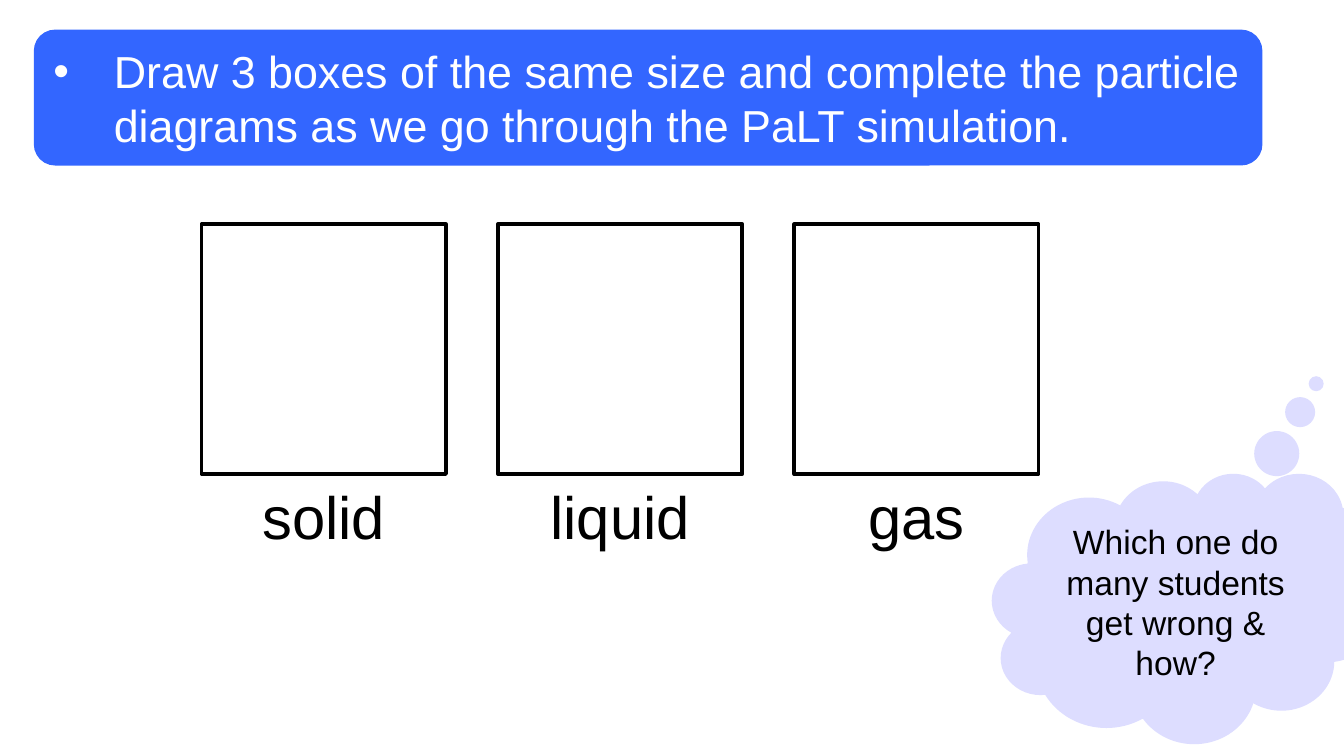
"""Build the slide with three empty particle-diagram boxes and a question cloud."""
from dataclasses import dataclass

from lxml import etree
from pptx import Presentation
from pptx.dml.color import RGBColor
from pptx.enum import shapes, text
from pptx.oxml import ns
from pptx.util import Cm, Pt


@dataclass(frozen=True)
class Theme:
    font: str = "Arial"
    black: str = "000000"
    white: str = "FFFFFF"
    banner: str = "3366FF"
    cloud: str = "DDDDFF"
    label_size: int = 32
    banner_size: int = 24
    cloud_size: int = 18
    outline: int = 2


@dataclass(frozen=True)
class Area:
    left: float
    top: float
    width: float
    height: float

    def lengths(self) -> tuple:
        return Cm(self.left), Cm(self.top), Cm(self.width), Cm(self.height)


@dataclass(frozen=True)
class StateBox:
    label: str
    column: int


THEME = Theme()
BOX = Area(3.81, 4.24, 4.62, 4.72)
PITCH = 5.6
LABEL = Area(4.14, 8.94, 3.96, 1.63)
BANNER = Area(0.64, 0.56, 23.22, 2.57)
CLOUD = Area(18.75, 8.94, 7.47, 5.11)
STATES = [StateBox(label, column) for column, label in enumerate(("solid", "liquid", "gas"))]


def shifted(area: Area, column: int) -> Area:
    return Area(area.left + column * PITCH, area.top, area.width, area.height)


def write(shape, words: str, size: int, color: str, align=text.PP_ALIGN.CENTER):
    frame = shape.text_frame
    frame.word_wrap = True
    paragraph = frame.paragraphs[0]
    paragraph.alignment = align
    run = paragraph.add_run()
    run.text = words
    run.font.name = THEME.font
    run.font.size = Pt(size)
    run.font.color.rgb = RGBColor.from_string(color)
    return paragraph


def fill_plain(shape, color: str) -> None:
    shape.fill.solid()
    shape.fill.fore_color.rgb = RGBColor.from_string(color)
    shape.line.fill.background()


def draw_state(slide, state: StateBox) -> None:
    box = slide.shapes.add_shape(
        shapes.MSO_SHAPE.RECTANGLE, *shifted(BOX, state.column).lengths())
    box.shadow.inherit = False
    box.fill.background()
    box.line.color.rgb = RGBColor.from_string(THEME.black)
    box.line.width = Pt(THEME.outline)
    label = slide.shapes.add_textbox(*shifted(LABEL, state.column).lengths())
    write(label, state.label, THEME.label_size, THEME.black)
    label.text_frame.auto_size = text.MSO_AUTO_SIZE.SHAPE_TO_FIT_TEXT


def draw_banner(placeholder, words: str) -> None:
    placeholder.left, placeholder.top, placeholder.width, placeholder.height = BANNER.lengths()
    geometry = etree.SubElement(
        placeholder.element.spPr, ns.qn("a:prstGeom"), prst="roundRect")
    adjustments = etree.SubElement(geometry, ns.qn("a:avLst"))
    etree.SubElement(adjustments, ns.qn("a:gd"), name="adj", fmla="val 15700")
    fill_plain(placeholder, THEME.banner)
    paragraph = write(
        placeholder, words, THEME.banner_size, THEME.white, text.PP_ALIGN.LEFT)
    paragraph.space_before = Pt(0)
    properties = paragraph._p.get_or_add_pPr()
    properties.set("marL", str(Cm(1.14)))
    properties.set("indent", str(-Cm(1.14)))
    etree.SubElement(properties, ns.qn("a:buFont"), typeface=THEME.font)
    etree.SubElement(properties, ns.qn("a:buChar"), char="•")
    placeholder.text_frame.auto_size = text.MSO_AUTO_SIZE.NONE
    placeholder.text_frame.vertical_anchor = text.MSO_ANCHOR.MIDDLE


def draw_cloud(slide, words: str) -> None:
    cloud = slide.shapes.add_shape(shapes.MSO_SHAPE.CLOUD_CALLOUT, *CLOUD.lengths())
    cloud.shadow.inherit = False
    cloud.adjustments[0] = 0.32
    cloud.adjustments[1] = -0.83
    fill_plain(cloud, THEME.cloud)
    write(cloud, words, THEME.cloud_size, THEME.black)
    cloud.text_frame.vertical_anchor = text.MSO_ANCHOR.MIDDLE


def main() -> None:
    presentation = Presentation()
    presentation.slide_width, presentation.slide_height = Cm(25.4), Cm(14.29)
    slide = presentation.slides.add_slide(presentation.slide_layouts[1])
    title = slide.shapes.title.element
    title.getparent().remove(title)
    for state in STATES:
        draw_state(slide, state)
    draw_banner(
        slide.placeholders[1],
        "Draw 3 boxes of the same size and complete the particle diagrams "
        "as we go through the PaLT simulation.")
    draw_cloud(slide, "Which one do many students get wrong & how?")
    presentation.save("out.pptx")


if __name__ == "__main__":
    main()
